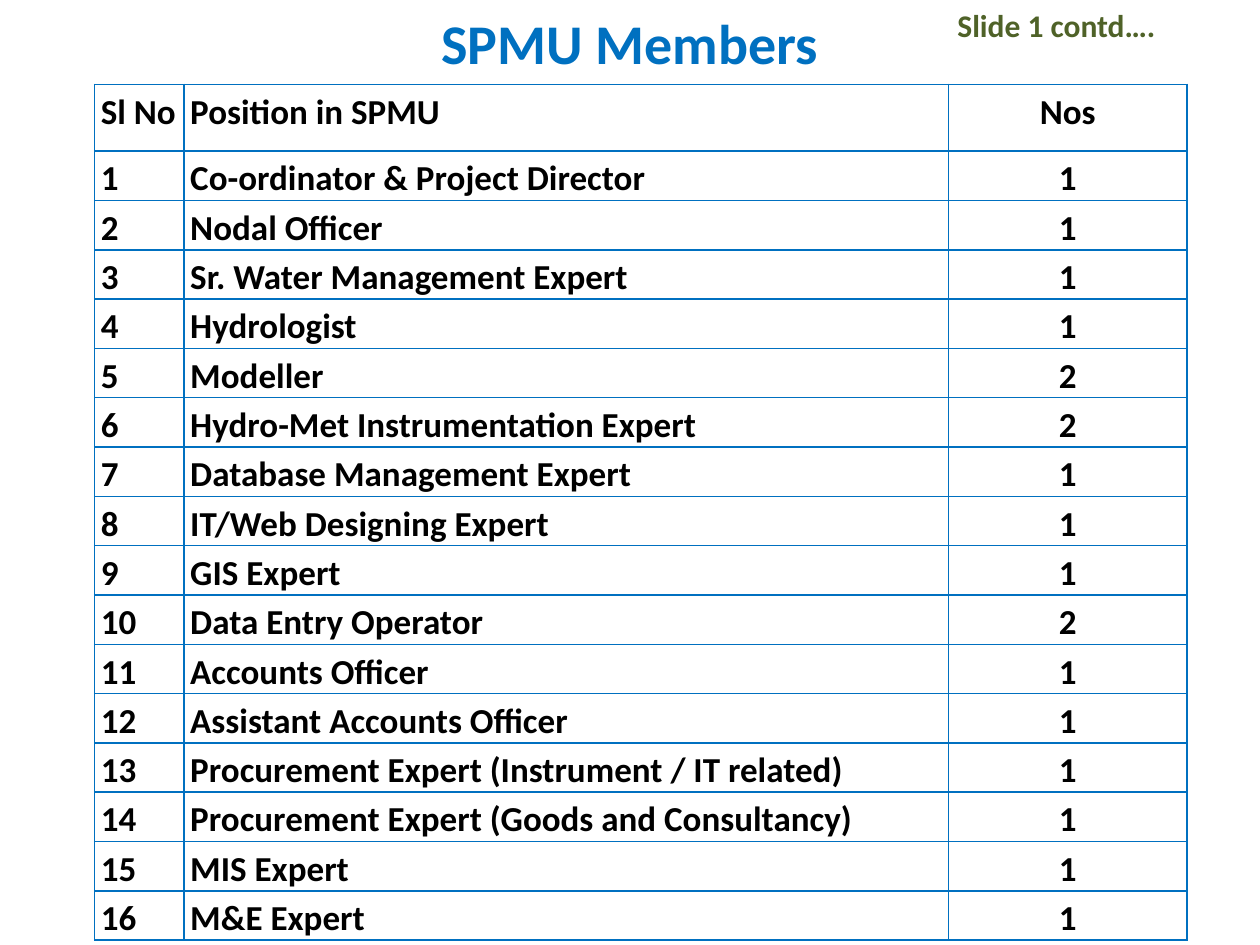
import pptx
import pptx.dml.color
import pptx.enum.text
import pptx.oxml.ns
import pptx.util
from lxml import etree

Inches = pptx.util.Inches
RGBColor = pptx.dml.color.RGBColor
PP_ALIGN = pptx.enum.text.PP_ALIGN
MSO_ANCHOR = pptx.enum.text.MSO_ANCHOR
qn = pptx.oxml.ns.qn

BLUE = RGBColor(0x00, 0x70, 0xC0)
GREEN = RGBColor(0x4F, 0x62, 0x28)
BLACK = RGBColor(0x00, 0x00, 0x00)

HEADER = ("Sl No", "Position in SPMU", "Nos")
MEMBERS = [
    ("Co-ordinator & Project Director", 1),
    ("Nodal Officer", 1),
    ("Sr. Water Management Expert", 1),
    ("Hydrologist", 1),
    ("Modeller", 2),
    ("Hydro-Met Instrumentation Expert", 2),
    ("Database Management Expert", 1),
    ("IT/Web Designing Expert", 1),
    ("GIS Expert", 1),
    ("Data Entry Operator", 2),
    ("Accounts Officer", 1),
    ("Assistant Accounts Officer", 1),
    ("Procurement Expert (Instrument / IT related)", 1),
    ("Procurement Expert (Goods and Consultancy)", 1),
    ("MIS Expert", 1),
    ("M&E Expert", 1),
]
COL_WIDTHS = (0.71, 6.07, 1.89)
COL_ALIGNS = (PP_ALIGN.LEFT, PP_ALIGN.LEFT, PP_ALIGN.CENTER)
TABLE_HEIGHT = 6.67
HEADER_HEIGHT = 0.53


def write(tf, text, size=20, color=BLACK, align=PP_ALIGN.LEFT, spacing=None):
    p = tf.paragraphs[0]
    p.alignment = align
    p.line_spacing = spacing
    r = p.add_run()
    r.text = text
    r.font.name = "Calibri"
    r.font.size = pptx.util.Pt(size)
    r.font.bold = True
    r.font.color.rgb = color


def add_title(s, text):
    sp = s.shapes.title
    sp.left, sp.top, sp.width, sp.height = 0, 0, Inches(10), Inches(0.67)
    sp.text_frame.vertical_anchor = MSO_ANCHOR.MIDDLE
    write(sp.text_frame, text, size=32, color=BLUE, align=PP_ALIGN.CENTER)


def add_note(s, text):
    sp = s.shapes.add_textbox(Inches(7.5), 0, Inches(2.08), Inches(0.4))
    sp.text_frame.word_wrap = True
    sp.text_frame.auto_size = pptx.enum.text.MSO_AUTO_SIZE.SHAPE_TO_FIT_TEXT
    write(sp.text_frame, text, size=18, color=GREEN)


def set_borders(cell, color, width):
    tcPr = cell._tc.get_or_add_tcPr()
    for side in ("lnL", "lnR", "lnT", "lnB"):
        ln = etree.SubElement(tcPr, qn("a:" + side), w=str(pptx.util.Pt(width)))
        fill = etree.SubElement(ln, qn("a:solidFill"))
        etree.SubElement(fill, qn("a:srgbClr"), val=str(color))


def fill_cell(cell, text, align):
    cell.margin_left = cell.margin_right = Inches(0.05)
    cell.margin_top = cell.margin_bottom = 0
    set_borders(cell, BLUE, 1)
    cell.fill.background()
    write(cell.text_frame, text, align=align, spacing=1.15)


def add_members_table(s):
    rows = [HEADER] + [(str(i), name, str(count))
                       for i, (name, count) in enumerate(MEMBERS, 1)]
    table = s.shapes.add_table(len(rows), len(HEADER), Inches(0.75), Inches(0.67),
                               Inches(sum(COL_WIDTHS)), Inches(TABLE_HEIGHT)).table
    table.first_row = table.horz_banding = False
    for col, width in zip(table.columns, COL_WIDTHS):
        col.width = Inches(width)
    member_height = (TABLE_HEIGHT - HEADER_HEIGHT) / len(MEMBERS)
    for i, (row, values) in enumerate(zip(table.rows, rows)):
        row.height = Inches(member_height if i else HEADER_HEIGHT)
        for cell, text, align in zip(row.cells, values, COL_ALIGNS):
            fill_cell(cell, text, align)


def main():
    prs = pptx.Presentation()
    prs.slide_width, prs.slide_height = Inches(10), Inches(7.5)
    s = prs.slides.add_slide(prs.slide_layouts[5])
    add_title(s, "SPMU Members")
    add_members_table(s)
    add_note(s, "Slide 1 contd….")
    prs.save("out.pptx")


if __name__ == "__main__":
    main()
